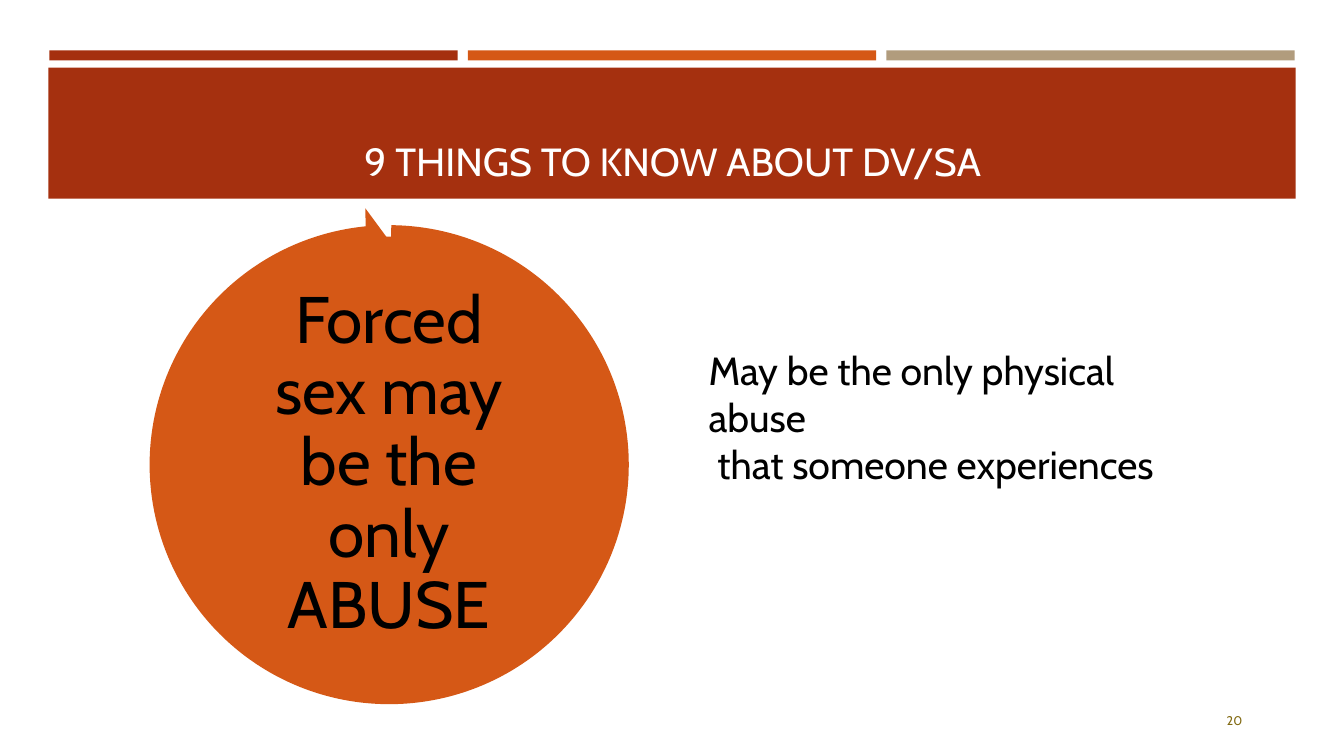
from pptx import Presentation
from pptx.dml.color import RGBColor
from pptx.enum.shapes import MSO_SHAPE as SHAPE
from pptx.enum.text import MSO_ANCHOR as ANCHOR, PP_ALIGN as ALIGN
from pptx.util import Inches, Pt

FONT = "Cabin"
RUST = RGBColor(0xA5, 0x30, 0x0F)
ORANGE = RGBColor(0xD5, 0x58, 0x16)
TAN = RGBColor(0xB1, 0x9C, 0x7D)
OLIVE = RGBColor(0x82, 0x6A, 0x12)
WHITE = RGBColor(0xFF, 0xFF, 0xFF)
BLACK = RGBColor(0x00, 0x00, 0x00)

# Three-column header grid and the circle's center, in inches
LEFT, BAR_W, BAR_GAP = 0.49, 4.05, 0.1
CENTER_X, CENTER_Y = 3.86, 4.61
# Head and tail angles are in units of 100000/60000 degrees
ARROW_ADJUSTMENTS = (0.05, 3.28, 158.43, 162.3, 0.06)


def box(left, top, width, height):
    return [Inches(v) for v in (left, top, width, height)]


def centered(size):
    """Square box around the circle's center."""
    return box(CENTER_X - size / 2, CENTER_Y - size / 2, size, size)


def add_shape(slide, kind, area, color):
    sp = slide.shapes.add_shape(kind, *area)
    sp.shadow.inherit = False
    sp.fill.solid()
    sp.fill.fore_color.rgb = color
    sp.line.fill.background()
    return sp


def add_text(slide, area, lines, size, color, align=ALIGN.LEFT,
             anchor=ANCHOR.TOP):
    tf = slide.shapes.add_textbox(*area).text_frame
    tf.word_wrap = True
    tf.vertical_anchor = anchor
    tf.text = "\n".join(lines)
    for p in tf.paragraphs:
        p.alignment = align
        for r in p.runs:
            r.font.name = FONT
            r.font.size = Pt(size)
            r.font.color.rgb = color
    return tf


def add_header(slide, title):
    for i, color in enumerate((RUST, ORANGE, TAN)):
        left = LEFT + i * (BAR_W + BAR_GAP)
        add_shape(slide, SHAPE.RECTANGLE, box(left, 0.5, BAR_W, 0.1), color)
    add_shape(slide, SHAPE.RECTANGLE, box(0.48, 0.67, 12.37, 1.3), RUST)
    add_text(slide, box(0.64, 0.77, 12.06, 1.11), [title], 28, WHITE,
             ALIGN.CENTER, ANCHOR.BOTTOM)


def add_circle(slide, message):
    disc = add_shape(slide, SHAPE.OVAL, centered(4.55), ORANGE)
    disc.line.color.rgb = WHITE
    disc.line.width = Pt(1.75)

    tf = add_text(slide, centered(3.03), [message], 47, BLACK,
                  ALIGN.CENTER, ANCHOR.MIDDLE)
    tf.margin_left = tf.margin_right = Inches(0.07)
    tf.margin_top = tf.margin_bottom = Inches(0.07)
    tf.paragraphs[0].line_spacing = 0.9

    ring = add_shape(slide, SHAPE.CIRCULAR_ARROW, centered(5.11), ORANGE)
    for i, value in enumerate(ARROW_ADJUSTMENTS):
        ring.adjustments[i] = value


def main():
    prs = Presentation()
    prs.slide_width, prs.slide_height = Inches(13.33), Inches(7.5)
    slide = prs.slides.add_slide(prs.slide_layouts[6])

    add_header(slide, "9 THINGS TO KNOW ABOUT DV/SA")
    add_circle(slide, "Forced sex may be the only ABUSE")

    # Explanation and slide number
    add_text(slide, box(6.93, 3.39, 5.06, 1.04),
             ["May be the only physical abuse", " that someone experiences"],
             28, BLACK)
    add_text(slide, box(9.42, 6.95, 3, 0.4), ["20"], 9, OLIVE,
             ALIGN.RIGHT, ANCHOR.MIDDLE)

    prs.save("out.pptx")


if __name__ == "__main__":
    main()
